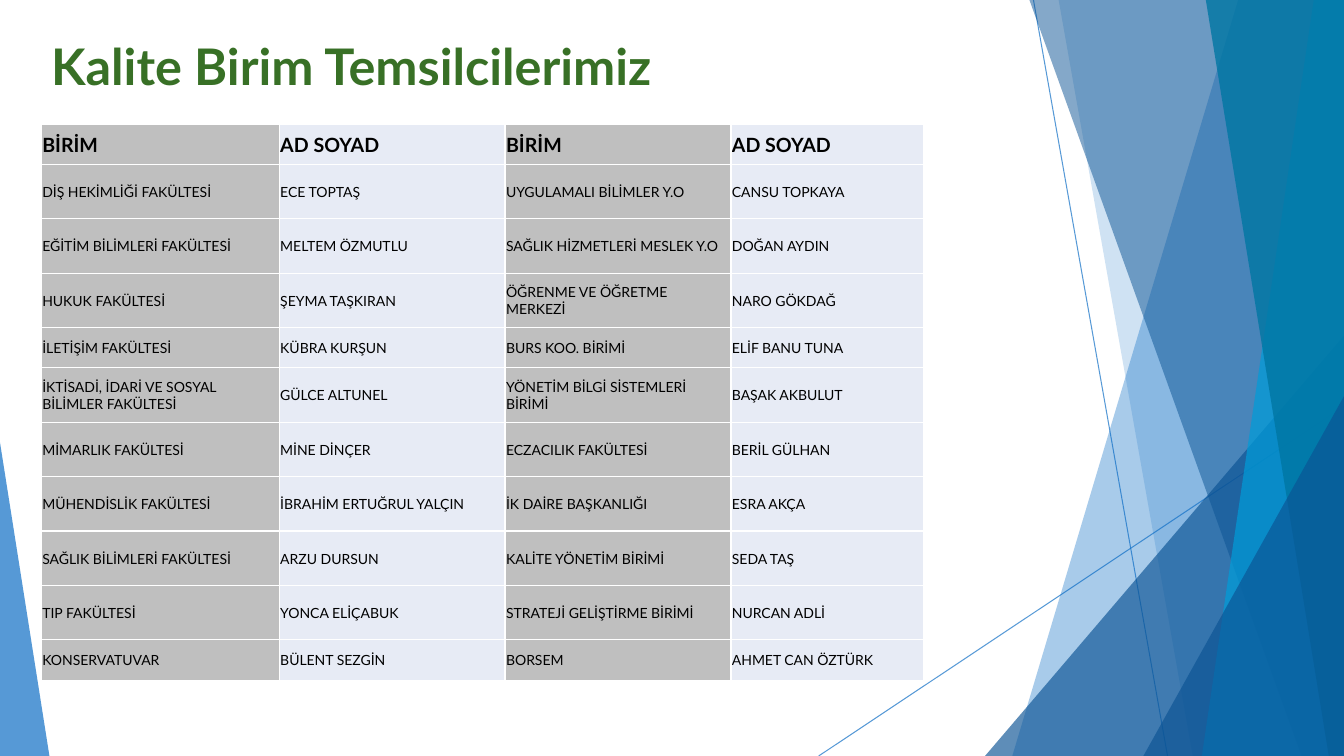
"""Build the slide that lists the quality unit representatives."""
import pptx
import pptx.dml.color
import pptx.enum.shapes
import pptx.enum.text
import pptx.oxml.ns
import pptx.util
import lxml.etree

Inches = pptx.util.Inches

THEME = {
    "font": "Lato", "title": "387026", "text": "000000", "border": "FFFFFF",
    "unit": "BFBFBF", "person": "E7EBF5",
    "blue": "0F6FC6", "navy": "0B5394", "sky": "009DD9", "teal": "0076A3",
    "title_size": 36, "header_size": 14, "body_size": 10,
}
TITLE = "Kalite Birim Temsilcilerimiz"
ROWS = [
    ("BİRİM", "AD SOYAD", "BİRİM", "AD SOYAD"),
    ("DİŞ HEKİMLİĞİ FAKÜLTESİ", "ECE TOPTAŞ", "UYGULAMALI BİLİMLER Y.O", "CANSU TOPKAYA"),
    ("EĞİTİM BİLİMLERİ FAKÜLTESİ", "MELTEM ÖZMUTLU", "SAĞLIK HİZMETLERİ MESLEK Y.O", "DOĞAN AYDIN"),
    ("HUKUK FAKÜLTESİ", "ŞEYMA TAŞKIRAN", "ÖĞRENME VE ÖĞRETME MERKEZİ", "NARO GÖKDAĞ"),
    ("İLETİŞİM FAKÜLTESİ", "KÜBRA KURŞUN", "BURS KOO. BİRİMİ", "ELİF BANU TUNA"),
    ("İKTİSADİ, İDARİ VE SOSYAL BİLİMLER FAKÜLTESİ", "GÜLCE ALTUNEL",
     "YÖNETİM BİLGİ SİSTEMLERİ BİRİMİ", "BAŞAK AKBULUT"),
    ("MİMARLIK FAKÜLTESİ", "MİNE DİNÇER", "ECZACILIK FAKÜLTESİ", "BERİL GÜLHAN"),
    ("MÜHENDİSLİK FAKÜLTESİ", "İBRAHİM ERTUĞRUL YALÇIN", "İK DAİRE BAŞKANLIĞI", "ESRA AKÇA"),
    ("SAĞLIK BİLİMLERİ FAKÜLTESİ", "ARZU DURSUN", "KALİTE YÖNETİM BİRİMİ", "SEDA TAŞ"),
    ("TIP FAKÜLTESİ", "YONCA ELİÇABUK", "STRATEJİ GELİŞTİRME BİRİMİ", "NURCAN ADLİ"),
    ("KONSERVATUVAR", "BÜLENT SEZGİN", "BORSEM", "AHMET CAN ÖZTÜRK"),
]
COLUMN_WIDTHS = (2.36, 2.24, 2.24, 1.91)
TALL_ROW, SHORT_ROW = 0.54, 0.4
SHORT_ROWS = {0, 4, 10}
TABLE_LEFT, TABLE_TOP = 0.41, 1.23
WIDTH, HEIGHT = 13.33, 7.5

LINES = [((10.25, 0), (11.58, HEIGHT)), ((WIDTH, 4.03), (8.12, HEIGHT))]
LINE_OPACITY = 70
BANDS_BEHIND = [("band", 12.28, 10.04, "blue", 36), ("band", 10.5, 11.83, "blue", 20)]
BANDS_FRONT = [("band", 10.21, 12.91, "navy", 50), ("band", 13.03, 11.92, "sky", 70),
               ("band", 11.96, 13.18, "teal", 80)]
DECORATION = [
    *BANDS_BEHIND,
    ("triangle", (9.77, WIDTH), 3.33, "navy", 66, 1),
    *BANDS_FRONT,
    ("triangle", (11.34, WIDTH), 3.93, "navy", 66, 1),
    ("triangle", (0, 0.49), 4.39, "blue", 70, 0),
]


def color(name):
    return pptx.dml.color.RGBColor.from_string(THEME[name])


def add_child(parent, tag, **attributes):
    child = lxml.etree.SubElement(parent, pptx.oxml.ns.qn(tag))
    for key, value in attributes.items():
        child.set(key, str(value))
    return child


def set_opacity(element, percent):
    for fill_color in element.iter(pptx.oxml.ns.qn("a:srgbClr")):
        add_child(fill_color, "a:alpha", val=percent * 1000)


def paint(shape, fill, opacity):
    shape.shadow.inherit = False
    shape.fill.solid()
    shape.fill.fore_color.rgb = color(fill)
    shape.line.fill.background()
    set_opacity(shape.fill._xPr, opacity)


def add_line(slide, start, end):
    points = [Inches(value) for value in (*start, *end)]
    line = slide.shapes.add_connector(pptx.enum.shapes.MSO_CONNECTOR.STRAIGHT, *points)
    line.line.color.rgb = color("blue")
    line.line.width = pptx.util.Pt(0.75)
    properties = line._element.spPr
    set_opacity(properties, LINE_OPACITY)
    add_child(properties, "a:effectLst")


def add_band(slide, top_x, bottom_x, fill, opacity):
    corners = [(top_x, 0), (WIDTH, 0), (WIDTH, HEIGHT), (bottom_x, HEIGHT)]
    points = [(Inches(x), Inches(y)) for x, y in corners]
    builder = slide.shapes.build_freeform(*points[0])
    builder.add_line_segments(points[1:], close=True)
    paint(builder.convert_to_shape(), fill, opacity)


def add_triangle(slide, span, top, fill, opacity, apex):
    left, right = span
    triangle = slide.shapes.add_shape(
        pptx.enum.shapes.MSO_SHAPE.ISOSCELES_TRIANGLE,
        Inches(left), Inches(top), Inches(right - left), Inches(HEIGHT - top))
    triangle.adjustments[0] = apex
    paint(triangle, fill, opacity)


def write(frame, text, *, size, fill="text", bold=False):
    frame.word_wrap = True
    run = frame.paragraphs[0].add_run()
    run.text = text
    run.font.name = THEME["font"]
    run.font.size = pptx.util.Pt(THEME[size])
    run.font.bold = bold
    run.font.color.rgb = color(fill)


def add_borders(cell):
    properties = cell._tc.get_or_add_tcPr()
    for side in ("a:lnL", "a:lnR", "a:lnT", "a:lnB"):
        border = add_child(properties, side, w=pptx.util.Pt(1))
        add_child(add_child(border, "a:solidFill"), "a:srgbClr", val=THEME["border"])


def add_representatives(slide):
    heights = [SHORT_ROW if index in SHORT_ROWS else TALL_ROW for index in range(len(ROWS))]
    table = slide.shapes.add_table(
        len(ROWS), len(COLUMN_WIDTHS), Inches(TABLE_LEFT), Inches(TABLE_TOP),
        Inches(sum(COLUMN_WIDTHS)), Inches(sum(heights))).table
    for column, width in zip(table.columns, COLUMN_WIDTHS):
        column.width = Inches(width)
    for row_index, texts in enumerate(ROWS):
        table.rows[row_index].height = Inches(heights[row_index])
        is_header = row_index == 0
        for column_index, text in enumerate(texts):
            cell = table.cell(row_index, column_index)
            cell.margin_left = cell.margin_right = cell.margin_top = Inches(0.01)
            cell.margin_bottom = 0
            cell.vertical_anchor = pptx.enum.text.MSO_ANCHOR.MIDDLE
            add_borders(cell)
            cell.fill.solid()
            cell.fill.fore_color.rgb = color("person" if column_index % 2 else "unit")
            write(cell.text_frame, text, bold=is_header,
                  size="header_size" if is_header else "body_size")


def main():
    presentation = pptx.Presentation()
    presentation.slide_width, presentation.slide_height = Inches(WIDTH), Inches(HEIGHT)
    slide = presentation.slides.add_slide(presentation.slide_layouts[6])
    for start, end in LINES:
        add_line(slide, start, end)
    builders = {"band": add_band, "triangle": add_triangle}
    for kind, *geometry in DECORATION:
        builders[kind](slide, *geometry)
    title = slide.shapes.add_textbox(Inches(TABLE_LEFT), Inches(0.3), Inches(9.4), Inches(0.94))
    write(title.text_frame, TITLE, size="title_size", fill="title", bold=True)
    add_representatives(slide)
    presentation.save("out.pptx")


if __name__ == "__main__":
    main()
